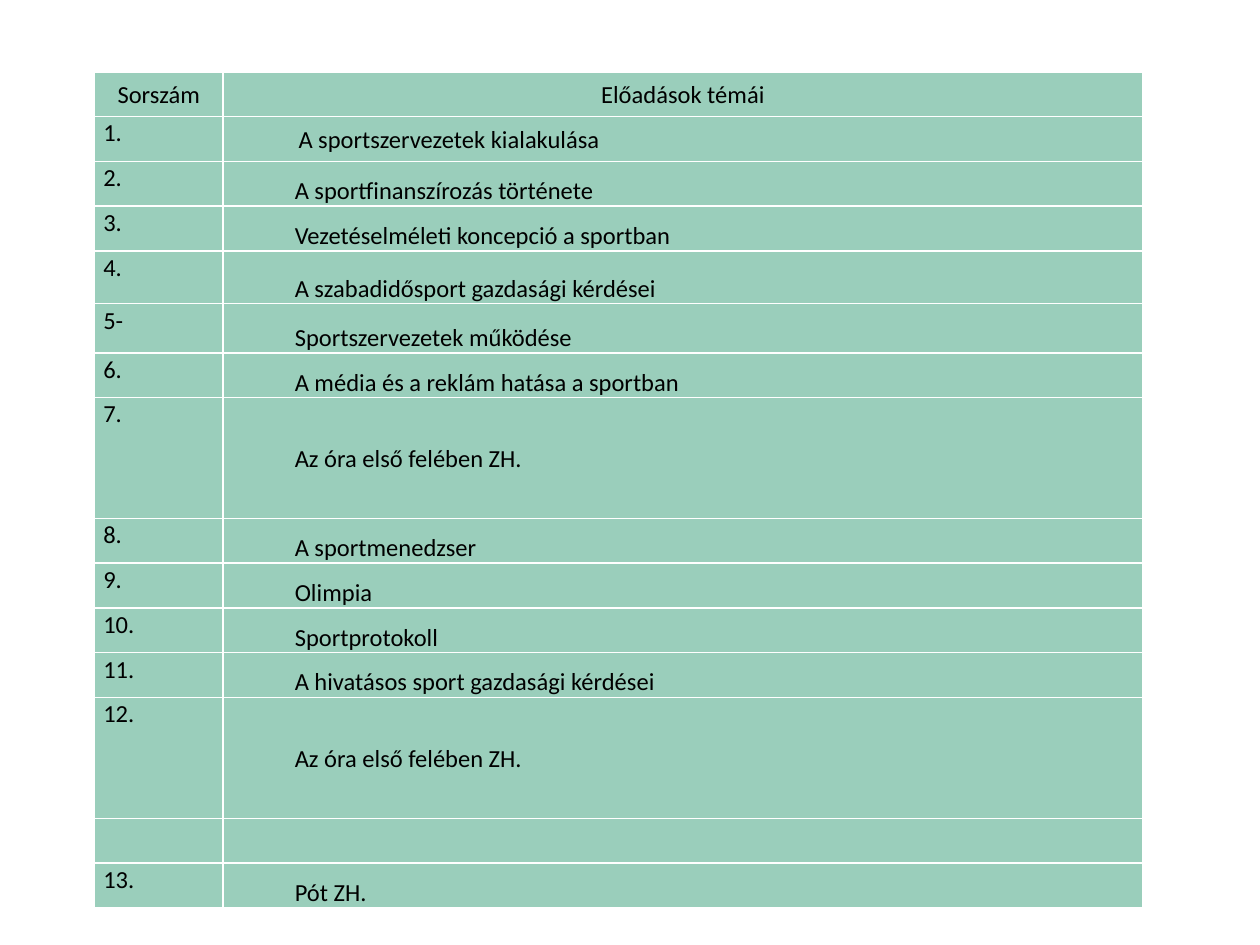
from lxml import etree
from pptx import Presentation
from pptx.dml.color import RGBColor
from pptx.enum.text import MSO_ANCHOR, PP_ALIGN
from pptx.oxml.ns import qn
from pptx.util import Inches, Pt

GREEN = RGBColor(0x9A, 0xCE, 0xBB)
WHITE = RGBColor(0xFF, 0xFF, 0xFF)
BLACK = RGBColor(0x00, 0x00, 0x00)

HEADER = ("Sorszám", "Előadások témái")
EXAM = "Az óra első felében ZH."
LECTURES = [
    ("1.", "A sportszervezetek kialakulása"),
    ("2.", "A sportfinanszírozás története"),
    ("3.", "Vezetéselméleti koncepció a sportban"),
    ("4.", "A szabadidősport gazdasági kérdései"),
    ("5-", "Sportszervezetek működése"),
    ("6.", "A média és a reklám hatása a sportban"),
    ("7.", EXAM),
    ("8.", "A sportmenedzser"),
    ("9.", "Olimpia"),
    ("10.", "Sportprotokoll"),
    ("11.", "A hivatásos sport gazdasági kérdései"),
    ("12.", EXAM),
    ("", ""),
    ("13.", "Pót ZH."),
]
ROWS = [HEADER] + LECTURES
COL_WIDTHS = (1.02, 7.3)
TABLE_HEIGHT = 6.64
TALL_ROWS = {4: 0.42, 5: 0.39, 7: 0.96, 12: 0.96}
ROW_HEIGHT = (TABLE_HEIGHT - sum(TALL_ROWS.values())) / (len(ROWS) - len(TALL_ROWS))


def add_borders(cell):
    tcPr = cell._tc.get_or_add_tcPr()
    for side in ("a:lnL", "a:lnR", "a:lnT", "a:lnB"):
        ln = etree.SubElement(tcPr, qn(side), w=str(Pt(1)))
        fill = etree.SubElement(ln, qn("a:solidFill"))
        etree.SubElement(fill, qn("a:srgbClr"), val=str(WHITE))


prs = Presentation()
prs.slide_width, prs.slide_height = Inches(10), Inches(7.5)
s = prs.slides.add_slide(prs.slide_layouts[6])

table = s.shapes.add_table(
    len(ROWS), len(COL_WIDTHS), Inches(0.75), Inches(0.57),
    Inches(sum(COL_WIDTHS)), Inches(TABLE_HEIGHT)).table
for column, width in zip(table.columns, COL_WIDTHS):
    column.width = Inches(width)

for i, row in enumerate(ROWS):
    table.rows[i].height = Inches(TALL_ROWS.get(i, ROW_HEIGHT))
    for j, content in enumerate(row):
        cell = table.cell(i, j)
        add_borders(cell)
        cell.fill.solid()
        cell.fill.fore_color.rgb = GREEN
        side_margin = Inches(0.02 if i == j == 0 else 0.07)
        cell.margin_left = cell.margin_right = side_margin
        cell.margin_top = cell.margin_bottom = 0
        if not content:
            continue

        p = cell.text_frame.paragraphs[0]
        p.line_spacing = 1.07
        p.alignment = PP_ALIGN.CENTER if i == 0 else PP_ALIGN.JUSTIFY
        if i == 0 or (j == 1 and (i == 1 or content == EXAM)):
            cell.vertical_anchor = MSO_ANCHOR.MIDDLE
        else:
            cell.vertical_anchor = MSO_ANCHOR.BOTTOM if j else MSO_ANCHOR.TOP
        if i and j:
            p.space_after = Pt(4)
            indent = Inches(0.53 if i == 1 else 0.5)
            p._p.get_or_add_pPr().set("marL", str(indent))

        r = p.add_run()
        r.text = content
        for name, value in {"name": "Calibri", "size": Pt(14), "bold": False}.items():
            setattr(r.font, name, value)
        r.font.color.rgb = BLACK

prs.save("out.pptx")
